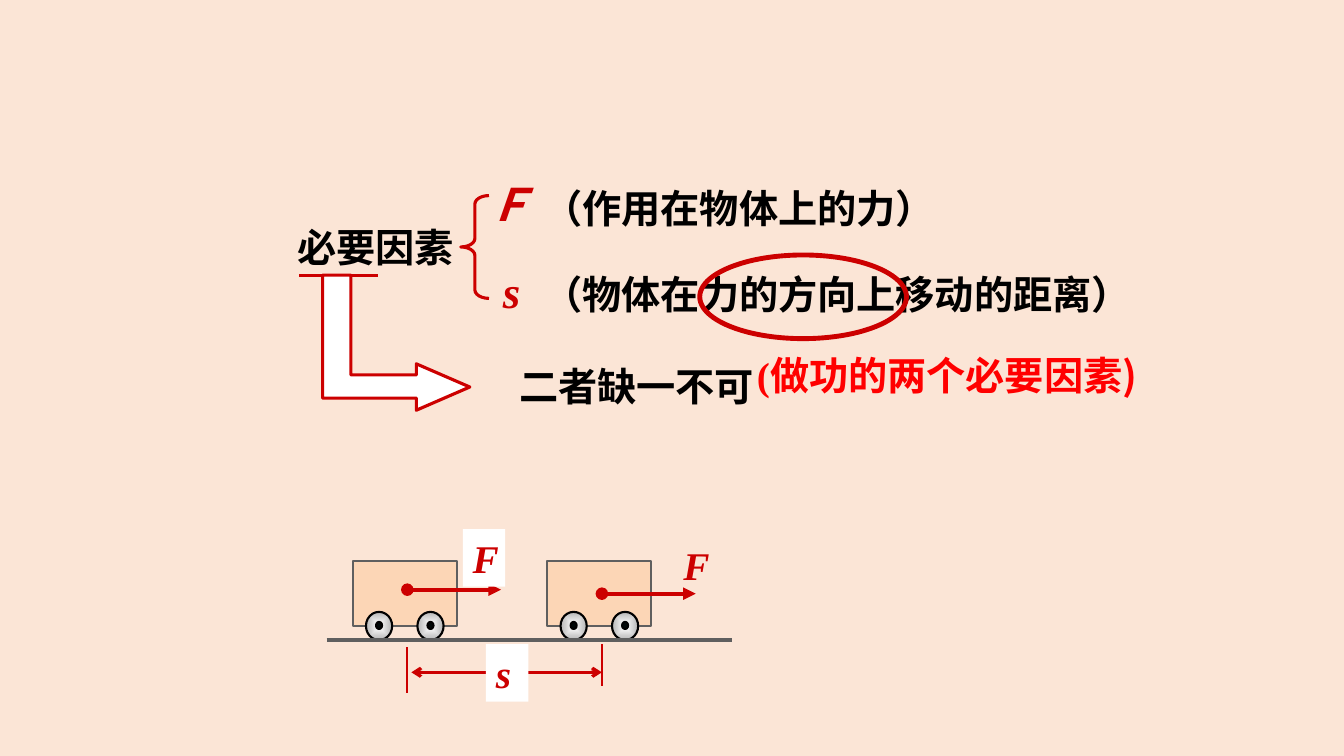
from lxml import etree
from pptx import Presentation
from pptx.dml.color import RGBColor
from pptx.enum.shapes import MSO_CONNECTOR, MSO_SHAPE
from pptx.oxml.ns import qn
from pptx.util import Inches, Pt

BACKGROUND = RGBColor(0xFB, 0xE5, 0xD6)
BLACK = RGBColor(0x00, 0x00, 0x00)
WHITE = RGBColor(0xFF, 0xFF, 0xFF)
DARK_RED = RGBColor(0xCC, 0x00, 0x00)
BRIGHT_RED = RGBColor(0xFF, 0x00, 0x00)
GRAY = RGBColor(0x5F, 0x5F, 0x5F)
WHEEL_GRAY = RGBColor(0xB6, 0xB6, 0xB6)
CART_FILL = RGBColor(0xFC, 0xD6, 0xB6)
HUB_FILL = RGBColor(0x00, 0x08, 0x08)

LATIN_FONT = "Times New Roman"
CHINESE_FONT = "Noto Sans CJK SC"

BENT_ARROW = [(4.66, 3.84), (4.13, 3.61), (4.13, 3.72), (3.48, 3.72), (3.48, 2.73),
              (3.2, 2.73), (3.2, 3.95), (4.13, 3.95), (4.13, 4.07)]


def add_text(slide, box, text, color=BLACK, size=28, italic=False, fill=None):
    shape = slide.shapes.add_textbox(*map(Inches, box))
    if fill is not None:
        shape.fill.solid()
        shape.fill.fore_color.rgb = fill
    shape.text_frame.word_wrap = True
    paragraph = shape.text_frame.paragraphs[0]
    paragraph.add_run().text = text
    font = paragraph.font
    font.name, font.size, font.bold, font.italic = LATIN_FONT, Pt(size), True, italic
    font.color.rgb = color
    properties = paragraph._p.pPr.find(qn("a:defRPr"))
    etree.SubElement(properties, qn("a:ea")).set("typeface", CHINESE_FONT)
    return shape


def style_shape(shape, line_color, width, fill=None):
    shape.shadow.inherit = False
    if fill is None:
        shape.fill.background()
    else:
        shape.fill.solid()
        shape.fill.fore_color.rgb = fill
    shape.line.color.rgb = line_color
    shape.line.width = Pt(width)


def add_preset(slide, kind, box, line_color, width, fill=None):
    shape = slide.shapes.add_shape(kind, *map(Inches, box))
    style_shape(shape, line_color, width, fill)
    return shape


def add_line(slide, start, end, color, width, head=None, tail=None):
    line = slide.shapes.add_connector(MSO_CONNECTOR.STRAIGHT, *map(Inches, start + end))
    line.line.color.rgb = color
    line.line.width = Pt(width)
    outline = line.line._get_or_add_ln()
    for tag, end_type in (("a:headEnd", head), ("a:tailEnd", tail)):
        if end_type:
            etree.SubElement(outline, qn(tag)).set("type", end_type)
    etree.SubElement(line._element.spPr, qn("a:effectLst"))


def fill_from_centre(shape, inner, outer):
    """Give the shape a gradient that spreads from its centre."""
    shape.fill.gradient()
    for stop, color, position in zip(shape.fill.gradient_stops, (inner, outer), (0, 1)):
        stop.color.rgb = color
        stop.position = position
    gradient = shape._element.spPr.find(qn("a:gradFill"))
    gradient.remove(gradient.find(qn("a:lin")))
    shading = etree.SubElement(gradient, qn("a:path"))
    shading.set("path", "shape")
    centre = etree.SubElement(shading, qn("a:fillToRect"))
    for side in "ltrb":
        centre.set(side, "50000")


def add_wheel(slide, left):
    wheel = add_preset(slide, MSO_SHAPE.OVAL, (left, 6.07, 0.26, 0.28), BLACK, 1.5)
    fill_from_centre(wheel, WHITE, WHEEL_GRAY)
    add_preset(slide, MSO_SHAPE.OVAL, (left + 0.1, 6.17, 0.06, 0.07), BLACK, 1.5, HUB_FILL)


def add_cart(slide, left, force_y):
    add_preset(slide, MSO_SHAPE.RECTANGLE, (left, 5.57, 1.03, 0.64), GRAY, 1.5, CART_FILL)
    for offset in (0.13, 0.64):
        add_wheel(slide, left + offset)
    add_line(slide, (left + 0.54, force_y), (left + 1.47, force_y), DARK_RED, 3,
             "oval", "triangle")


def add_symbol(slide, left, top, text, fill=None):
    add_text(slide, (left, top, 0.42, 0.57), text, DARK_RED, italic=True, fill=fill)


def add_factors(slide):
    add_text(slide, (5.29, 1.78, 4.21, 0.57), "（作用在物体上的力）")
    distance = add_text(slide, (5.37, 2.67, 6.06, 0.49), "（物体在力的方向上移动的距离）")
    frame = distance.text_frame
    frame.margin_left = frame.margin_right = Inches(0.02)
    frame.margin_top = frame.margin_bottom = Inches(0.01)
    add_text(slide, (4.74, 1.7, 1.02, 0.64), "Ｆ", DARK_RED, 32, True)
    add_preset(slide, MSO_SHAPE.OVAL, (6.94, 2.53, 2.05, 0.83), DARK_RED, 3.5)
    add_text(slide, (5.05, 3.55, 4.53, 0.57), "二者缺一不可")
    brace = add_preset(slide, MSO_SHAPE.LEFT_BRACE, (4.57, 1.94, 0.28, 1.02), DARK_RED, 2.25)
    brace.adjustments[0] = 0.3
    add_text(slide, (2.85, 2.17, 1.97, 0.57), "必要因素")
    add_text(slide, (4.89, 2.57, 0.55, 0.64), "s", DARK_RED, 32, True)


def add_conclusion_arrow(slide):
    add_line(slide, (2.97, 2.73), (3.75, 2.73), DARK_RED, 2.25)
    points = [(Inches(x), Inches(y)) for x, y in BENT_ARROW]
    builder = slide.shapes.build_freeform(*points[0])
    builder.add_line_segments(points[1:], close=True)
    style_shape(builder.convert_to_shape(), DARK_RED, 2.25, WHITE)


def add_cart_diagram(slide):
    add_cart(slide, 5.43, 5.89)
    add_symbol(slide, 6.68, 5.32, "F")
    add_cart(slide, 3.5, 5.85)
    add_symbol(slide, 4.59, 5.25, "F", WHITE)
    add_line(slide, (3.24, 6.35), (7.26, 6.35), GRAY, 3)
    add_line(slide, (4.04, 6.42), (4.04, 6.88), DARK_RED, 1.5)
    add_line(slide, (5.97, 6.39), (5.97, 6.81), DARK_RED, 1.5)
    add_line(slide, (4.08, 6.67), (5.97, 6.67), DARK_RED, 2.25, "arrow", "arrow")
    add_symbol(slide, 4.82, 6.39, "s", WHITE)


def add_remark(slide):
    remark = add_text(slide, (7.41, 3.44, 4.03, 0.57), "(", BRIGHT_RED)
    run = remark.text_frame.paragraphs[0].add_run()
    run.text = "做功的两个必要因素)"
    run.font.name = CHINESE_FONT


def main():
    presentation = Presentation()
    presentation.slide_width = Inches(13.33)
    presentation.slide_height = Inches(7.5)
    slide = presentation.slides.add_slide(presentation.slide_layouts[6])
    slide.background.fill.solid()
    slide.background.fill.fore_color.rgb = BACKGROUND
    add_factors(slide)
    add_conclusion_arrow(slide)
    add_cart_diagram(slide)
    add_remark(slide)
    presentation.save("out.pptx")


if __name__ == "__main__":
    main()
